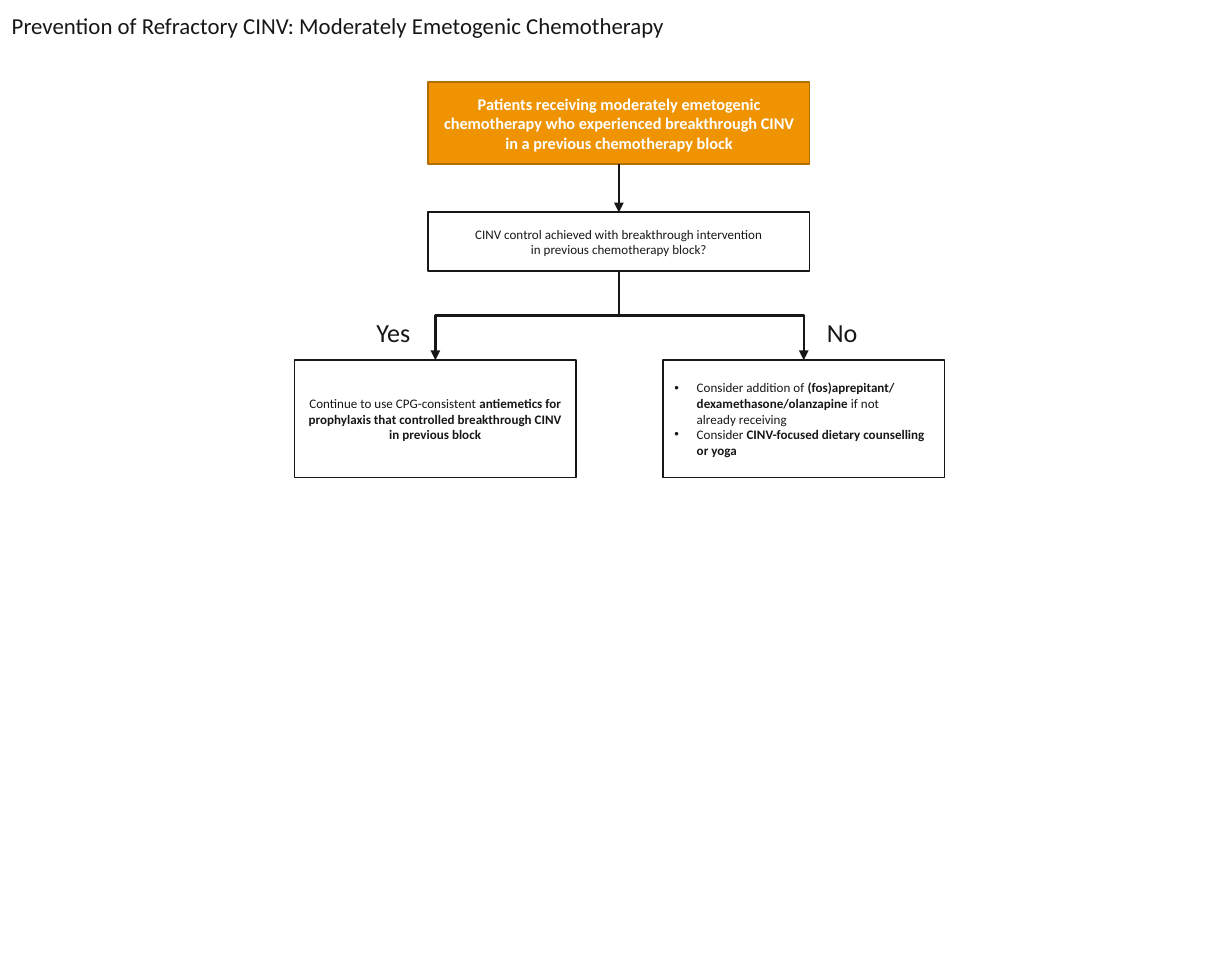
import pptx
import pptx.dml.color
import pptx.enum.shapes
import pptx.enum.text
import pptx.oxml
import pptx.oxml.ns
import pptx.util
from dataclasses import dataclass

Inches = pptx.util.Inches
ALIGN = pptx.enum.text.PP_ALIGN
ANCHOR = pptx.enum.text.MSO_ANCHOR
CONNECTOR = pptx.enum.shapes.MSO_CONNECTOR
BOTTOM_SITE, TOP_SITE = 2, 0


@dataclass(frozen=True)
class Theme:
    font: str = "Calibri"
    ink: str = "171717"
    white: str = "FFFFFF"
    orange: str = "EF9400"
    orange_edge: str = "B36F01"
    title_size: float = 14
    header_size: float = 10
    body_size: float = 8
    label_size: float = 16
    box_line: float = 1
    arrow_line: float = 1.5
    bullet_indent: float = 0.19


class FlowchartSlide:
    def __init__(self, presentation, theme):
        self.theme = theme
        self.slide = presentation.slides.add_slide(presentation.slide_layouts[5])

    def color(self, value):
        return pptx.dml.color.RGBColor.from_string(value)

    def add_runs(self, paragraph, runs, size, color=None, align=ALIGN.LEFT):
        paragraph.alignment = align
        for text, bold in runs:
            run = paragraph.add_run()
            run.text = text
            run.font.name = self.theme.font
            run.font.size = pptx.util.Pt(size)
            run.font.bold = bold
            run.font.color.rgb = self.color(color or self.theme.ink)

    def indent(self, paragraph, bullet):
        properties = paragraph._p.get_or_add_pPr()
        margin = Inches(self.theme.bullet_indent)
        properties.set("marL", str(margin))
        properties.set("indent", str(-margin if bullet else 0))
        if bullet:
            namespace = pptx.oxml.ns.nsdecls("a")
            properties.append(pptx.oxml.parse_xml(f'<a:buFont {namespace} typeface="Arial"/>'))
            properties.append(pptx.oxml.parse_xml(f'<a:buChar {namespace} char="•"/>'))
        else:
            paragraph.level = 1

    def title(self, text, left, top, width, height):
        title = self.slide.shapes.title
        title.left, title.top = Inches(left), Inches(top)
        title.width, title.height = Inches(width), Inches(height)
        frame = title.text_frame
        frame.word_wrap = True
        frame.auto_size = pptx.enum.text.MSO_AUTO_SIZE.NONE
        frame.vertical_anchor = ANCHOR.MIDDLE
        self.add_runs(frame.paragraphs[0], [(text, False)], self.theme.title_size)

    def label(self, text, left, top, width, height):
        label = self.slide.shapes.add_textbox(*map(Inches, (left, top, width, height)))
        label.text_frame.word_wrap = True
        self.add_runs(label.text_frame.paragraphs[0], [(text, False)], self.theme.label_size)

    def box(self, left, top, width, height, fill=None, edge=None):
        shape = self.slide.shapes.add_shape(
            pptx.enum.shapes.MSO_SHAPE.RECTANGLE, *map(Inches, (left, top, width, height)))
        shape.shadow.inherit = False
        if fill:
            shape.fill.solid()
            shape.fill.fore_color.rgb = self.color(fill)
        else:
            shape.fill.background()
        shape.line.color.rgb = self.color(edge or self.theme.ink)
        shape.line.width = pptx.util.Pt(self.theme.box_line)
        shape.text_frame.word_wrap = True
        shape.text_frame.vertical_anchor = ANCHOR.MIDDLE
        return shape

    def fill_text(self, shape, paragraphs, size, color=None, align=ALIGN.CENTER, bullets=None):
        frame = shape.text_frame
        for index, runs in enumerate(paragraphs):
            paragraph = frame.add_paragraph() if index else frame.paragraphs[0]
            self.add_runs(paragraph, runs, size, color, align)
            if bullets:
                self.indent(paragraph, bullets[index])

    def arrow(self, source, target):
        start_x, end_x = (shape.left + shape.width // 2 for shape in (source, target))
        start_y, end_y = source.top + source.height, target.top
        straight = start_x == end_x
        kind = CONNECTOR.STRAIGHT if straight else CONNECTOR.ELBOW
        connector = self.slide.shapes.add_connector(kind, start_x, start_y, end_x, end_y)
        connector.begin_connect(source, BOTTOM_SITE)
        connector.end_connect(target, TOP_SITE)
        if not straight:
            self.turn_downward(connector, start_x, start_y, end_x, end_y)
        connector.line.color.rgb = self.color(self.theme.ink)
        connector.line.width = pptx.util.Pt(self.theme.arrow_line)
        namespace = pptx.oxml.ns.nsdecls("a")
        connector.line._get_or_add_ln().append(
            pptx.oxml.parse_xml(f'<a:tailEnd {namespace} type="triangle"/>'))
        connector._element.spPr.append(pptx.oxml.parse_xml(f"<a:effectLst {namespace}/>"))

    def turn_downward(self, connector, start_x, start_y, end_x, end_y):
        drop, spread = end_y - start_y, abs(end_x - start_x)
        connector.left = (start_x + end_x - drop) // 2
        connector.top = (start_y + end_y - spread) // 2
        connector.width, connector.height = drop, spread
        transform = connector._element.spPr.find(pptx.oxml.ns.qn("a:xfrm"))
        rightward = end_x > start_x
        transform.set("rot", str((270 if rightward else 90) * 60000))
        transform.set("flipH", "1" if rightward else "0")
        transform.set("flipV", "0")


def main():
    theme = Theme()
    presentation = pptx.Presentation()
    presentation.slide_width = Inches(10.5)
    presentation.slide_height = Inches(8.25)
    chart = FlowchartSlide(presentation, theme)
    chart.title("Prevention of Refractory CINV: Moderately Emetogenic Chemotherapy", 0, 0, 10.5, 0.44)

    patients = chart.box(3.65, 0.7, 3.25, 0.7, theme.orange, theme.orange_edge)
    chart.fill_text(patients, [[
        ("Patients receiving moderately emetogenic chemotherapy who experienced "
         "breakthrough CINV in a previous chemotherapy block", True)]],
        theme.header_size, theme.white)

    question = chart.box(3.65, 1.81, 3.25, 0.5)
    chart.fill_text(question, [
        [("CINV control achieved with breakthrough intervention", False)],
        [("in previous chemotherapy block?", False)]], theme.body_size)

    controlled, refractory = (chart.box(left, 3.07, 2.4, 1) for left in (2.51, 5.65))
    chart.fill_text(controlled, [[
        ("Continue to use CPG-consistent ", False),
        ("antiemetics for prophylaxis that controlled breakthrough CINV in previous block", True)]],
        theme.body_size)
    chart.fill_text(refractory, [
        [("Consider addition of ", False),
         ("(fos)aprepitant/ dexamethasone/olanzapine ", True),
         ("if not", False)],
        [("already receiving", False)],
        [("Consider ", False), ("CINV-focused dietary counselling or yoga", True)]],
        theme.body_size, align=ALIGN.LEFT, bullets=(True, False, True))

    for source, target in ((patients, question), (question, controlled), (question, refractory)):
        chart.arrow(source, target)
    for text, left, width in (("Yes", 3.11, 0.66), ("No", 6.95, 0.9)):
        chart.label(text, left, 2.65, width, 0.37)

    presentation.save("out.pptx")


if __name__ == "__main__":
    main()
